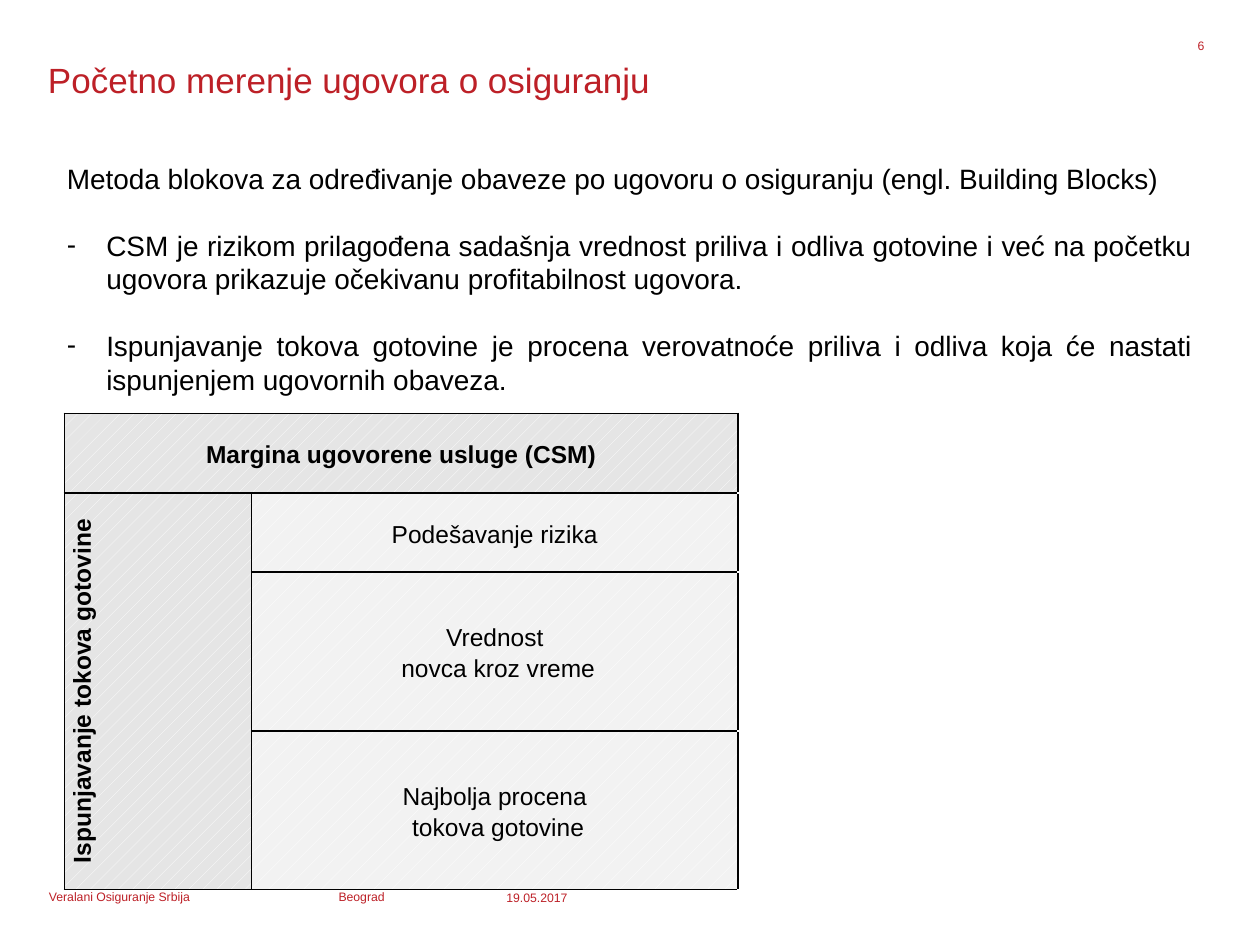
"""Build the slide on the initial measurement of insurance contracts."""
from pptx import Presentation
from pptx.util import Pt
from pptx.dml.color import RGBColor
from pptx.enum.dml import MSO_PATTERN as Pat
from pptx.enum.text import PP_ALIGN as Al, MSO_ANCHOR as Anc, MSO_AUTO_SIZE as Auto
from pptx.oxml import parse_xml
from pptx.oxml.ns import nsdecls

RED, BLACK, WHITE = "BD2027", "000000", "FFFFFF"


def style(para, size, tint, **extra):
    """Format a paragraph's font and its own settings."""
    font = para.font
    font.name, font.size, font.bold = "Arial", Pt(size), extra.pop("bold", False)
    font.color.rgb = RGBColor.from_string(tint)
    for key, val in extra.items():
        setattr(para, key, val)


def place(shape, box, **extra):
    """Move a text shape and format its frame."""
    shape.left, shape.top, shape.width, shape.height = [Pt(n) for n in box]
    form = dict(word_wrap=True, auto_size=Auto.NONE, vertical_anchor=Anc.TOP,
                margin_left=0, margin_right=0, margin_top=0, margin_bottom=0)
    for key, val in {**form, **extra}.items():
        setattr(shape.text_frame, key, val)
    return shape.text_frame


deck = Presentation()
deck.slide_width, deck.slide_height = Pt(720), Pt(540)
slide = deck.slides.add_slide(deck.slide_layouts[1])
title, body = slide.placeholders

frame = place(title, (27.4, 35.3, 660, 44))
frame.text = "Početno merenje ugovora o osiguranju"
style(frame.paragraphs[0], 20, RED, alignment=Al.LEFT, line_spacing=Pt(22))

side, edge = Pt(7.2), Pt(3.6)
frame = place(body, (31, 88.6, 657.4, 162.7), margin_left=side, margin_right=side,
              margin_top=edge, margin_bottom=edge)
lines = [
    "Metoda blokova za određivanje obaveze po ugovoru o osiguranju (engl. Building Blocks)",
    "CSM je rizikom prilagođena sadašnja vrednost priliva i odliva gotovine i već na početku "
    "ugovora prikazuje očekivanu profitabilnost ugovora.",
    "Ispunjavanje tokova gotovine je procena verovatnoće priliva i odliva koja će nastati "
    "ispunjenjem ugovornih obaveza.",
]
frame.text = "\n".join(lines)
for i, para in enumerate(frame.paragraphs):
    props = para._p.get_or_add_pPr()
    dent = Pt(22.5) if i else 0
    props.set("marL", str(dent))
    props.set("indent", str(-dent))
    mark = '<a:buChar %s char="-"/>' if i else "<a:buNone %s/>"
    props.append(parse_xml(mark % nsdecls("a")))
    style(para, 16, BLACK, alignment=Al.JUSTIFY, line_spacing=1.0,
          space_before=Pt(19 if i else 0))

small = [
    ("Veralani Osiguranje Srbija", (28, 508.3, 155, 9), Al.LEFT),
    ("Beograd", (193.5, 508.3, 88, 9), Al.LEFT),
    ("19.05.2017", (289.4, 508.6, 63, 9), Al.LEFT),
    ("6", (672.5, 21.6, 15.8, 14), Al.RIGHT),
]
for text, box, align in small:
    frame = place(slide.shapes.add_textbox(0, 0, 0, 0), box)
    frame.text = text
    style(frame.paragraphs[0], 7, RED, alignment=align)

wide, high = (107, 278, 153), (45.4, 45.4, 90.7, 90.7)
grid = slide.shapes.add_table(4, 3, Pt(36.8), Pt(236.2), Pt(sum(wide)), Pt(sum(high))).table
grid.first_row = grid.horz_banding = False
for col, size in zip(grid.columns, wide):
    col.width = Pt(size)
for row, size in zip(grid.rows, high):
    row.height = Pt(size)
grid.cell(0, 0).merge(grid.cell(0, 1))
grid.cell(1, 0).merge(grid.cell(3, 0))

words = {
    (0, 0): "Margina ugovorene usluge (CSM)",
    (1, 0): "Ispunjavanje tokova gotovine",
    (1, 1): "Podešavanje rizika",
    (2, 1): "Vrednost\v novca kroz vreme",
    (3, 1): "Najbolja procena\v tokova gotovine",
}
for r in range(4):
    for c in range(3):
        cell = grid.cell(r, c)
        props = cell._tc.get_or_add_tcPr()
        for tag in "LRTB" if c < 2 else "L":
            props.append(parse_xml(
                f'<a:ln{tag} {nsdecls("a")} w="12700"><a:solidFill>'
                f'<a:srgbClr val="{BLACK}"/></a:solidFill></a:ln{tag}>'))
        if c == 2:
            cell.fill.background()
            continue
        head = r == 0 or c == 0
        fill = cell.fill
        fill.patterned()
        fill.pattern = Pat.PERCENT_10 if head else Pat.PERCENT_5
        fill.fore_color.rgb = RGBColor.from_string(WHITE)
        fill.back_color.rgb = RGBColor.from_string("E5E5E5" if head else "F2F2F2")
        if (r, c) in words:
            form = dict(vertical_anchor=Anc.MIDDLE, margin_left=Pt(5), margin_right=Pt(5),
                        margin_top=0, margin_bottom=0)
            for key, val in form.items():
                setattr(cell, key, val)
            para = cell.text_frame.paragraphs[0]
            para.text = words[r, c]
            style(para, 14, BLACK, bold=head, alignment=Al.CENTER, line_spacing=1.15)
grid.cell(1, 0)._tc.tcPr.set("vert", "vert270")

deck.save("out.pptx")
